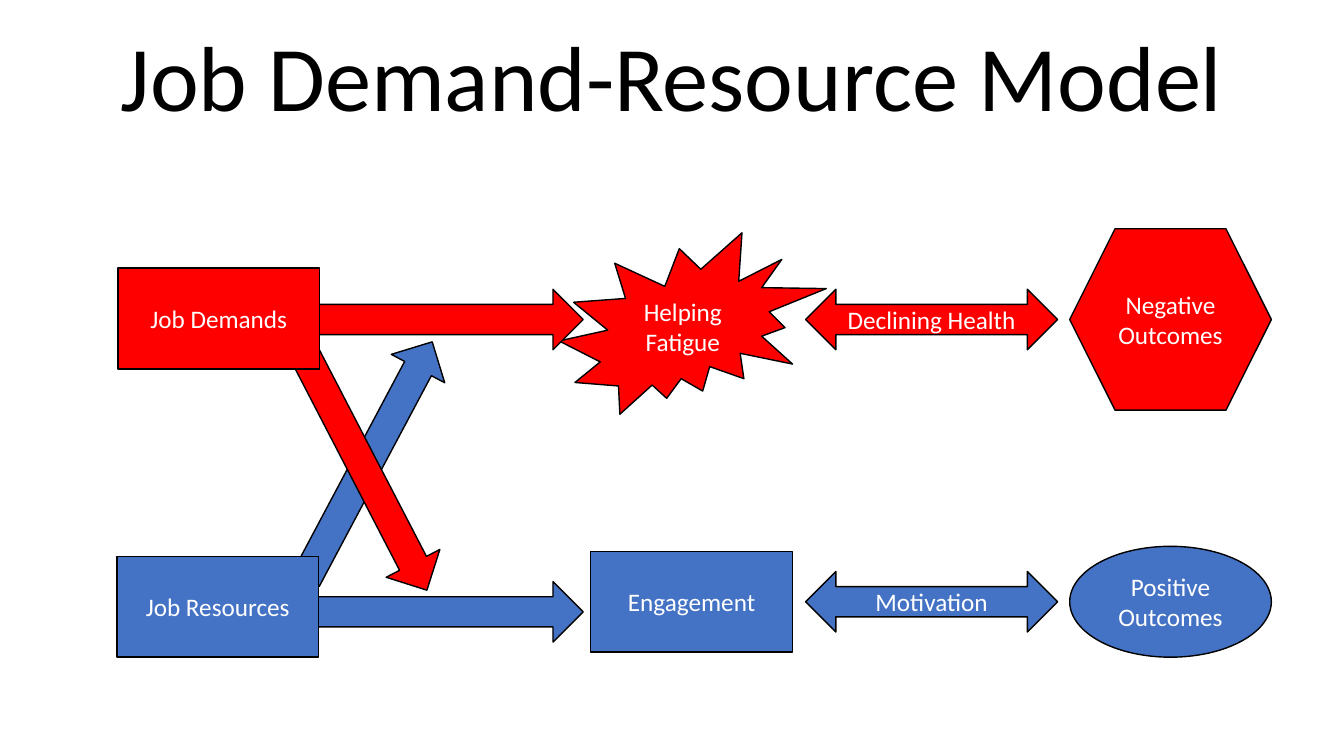
from pptx import Presentation
from pptx.dml.color import RGBColor
from pptx.enum.shapes import MSO_SHAPE
from pptx.enum.text import MSO_ANCHOR, PP_ALIGN
from pptx.util import Inches, Pt

RED = RGBColor(0xFF, 0x00, 0x00)
BLUE = RGBColor(0x44, 0x72, 0xC4)
BLACK = RGBColor(0x00, 0x00, 0x00)
WHITE = RGBColor(0xFF, 0xFF, 0xFF)
BOX, OVAL, HEX = MSO_SHAPE.RECTANGLE, MSO_SHAPE.OVAL, MSO_SHAPE.HEXAGON
BURST = MSO_SHAPE.EXPLOSION2
ARROW, DOUBLE = MSO_SHAPE.RIGHT_ARROW, MSO_SHAPE.LEFT_RIGHT_ARROW
MIDDLE, BOTTOM = MSO_ANCHOR.MIDDLE, MSO_ANCHOR.BOTTOM
CENTER = PP_ALIGN.CENTER

# Content
TITLE = "Job Demand-Resource Model"
# Centres of the grid, in inches
COLS = {"cause": 2.16, "cross": 3.64, "path": 4.45, "state": 6.87,
        "link": 9.24, "end": 11.61}
ROWS = {"top": 3.17, "mid": 4.62, "low": 5.97}
# Sizes of each kind of part
SIZES = {BOX: (2, 1), OVAL: (2, 1.1), HEX: (2, 1.8), BURST: (2.65, 1.8),
         ARROW: (2.67, 0.6), DOUBLE: (2.5, 0.6)}
# Text, kind, column, row, colour, turn, shift from the grid; back to front
PARTS = [
    ("Helping Fatigue", BURST, "state", "top", RED, 0, (0, 0.04)),
    ("Positive Outcomes", OVAL, "end", "low", BLUE, 0, (0, 0)),
    ("Engagement", BOX, "state", "low", BLUE, 0, (-0.01, 0)),
    ("Negative Outcomes", HEX, "end", "top", RED, 0, (0, 0)),
    ("Motivation", DOUBLE, "link", "low", BLUE, 0, (0, 0)),
    ("Declining Health", DOUBLE, "link", "top", RED, 0, (0, 0)),
    ("", ARROW, "path", "low", BLUE, 0, (0, 0.1)),
    ("", ARROW, "path", "top", RED, 0, (0, 0)),
    ("", ARROW, "cross", "mid", BLUE, 298, (0.02, -0.05)),
    ("Job Resources", BOX, "cause", "low", BLUE, 0, (0, 0.05)),
    ("", ARROW, "cross", "mid", RED, 62.6, (-0.02, 0.05)),
    ("Job Demands", BOX, "cause", "top", RED, 0, (0.01, -0.01)),
]
LABEL = {"name": "Calibri", "size": Pt(18)}
HEAD = {"name": "Calibri", "size": Pt(66)}


def write(shape, text, style, color, anchor):
    frame = shape.text_frame
    frame.word_wrap = True
    frame.vertical_anchor = anchor
    para = frame.paragraphs[0]
    para.alignment = CENTER
    run = para.add_run()
    run.text = text
    for key, value in style.items():
        setattr(run.font, key, value)
    run.font.color.rgb = color
    return para


deck = Presentation()
deck.slide_width, deck.slide_height = Inches(13.33), Inches(7.5)
slide = deck.slides.add_slide(deck.slide_layouts[5])

# Title
title = slide.shapes.title
title.left, title.top = Inches(0.87), Inches(0.08)
title.width, title.height = Inches(11.59), Inches(1.27)
write(title, TITLE, HEAD, BLACK, BOTTOM).line_spacing = 0.9

# Diagram
for text, kind, col, row, color, turn, (dx, dy) in PARTS:
    wide, high = SIZES[kind]
    left = COLS[col] + dx - wide / 2
    top = ROWS[row] + dy - high / 2
    part = slide.shapes.add_shape(
        kind, Inches(left), Inches(top), Inches(wide), Inches(high))
    part.rotation = turn
    part.shadow.inherit = False
    part.fill.solid()
    part.fill.fore_color.rgb = color
    part.line.color.rgb = BLACK
    part.line.width = Pt(1)
    if text:
        write(part, text, LABEL, WHITE, MIDDLE)

deck.save("out.pptx")
